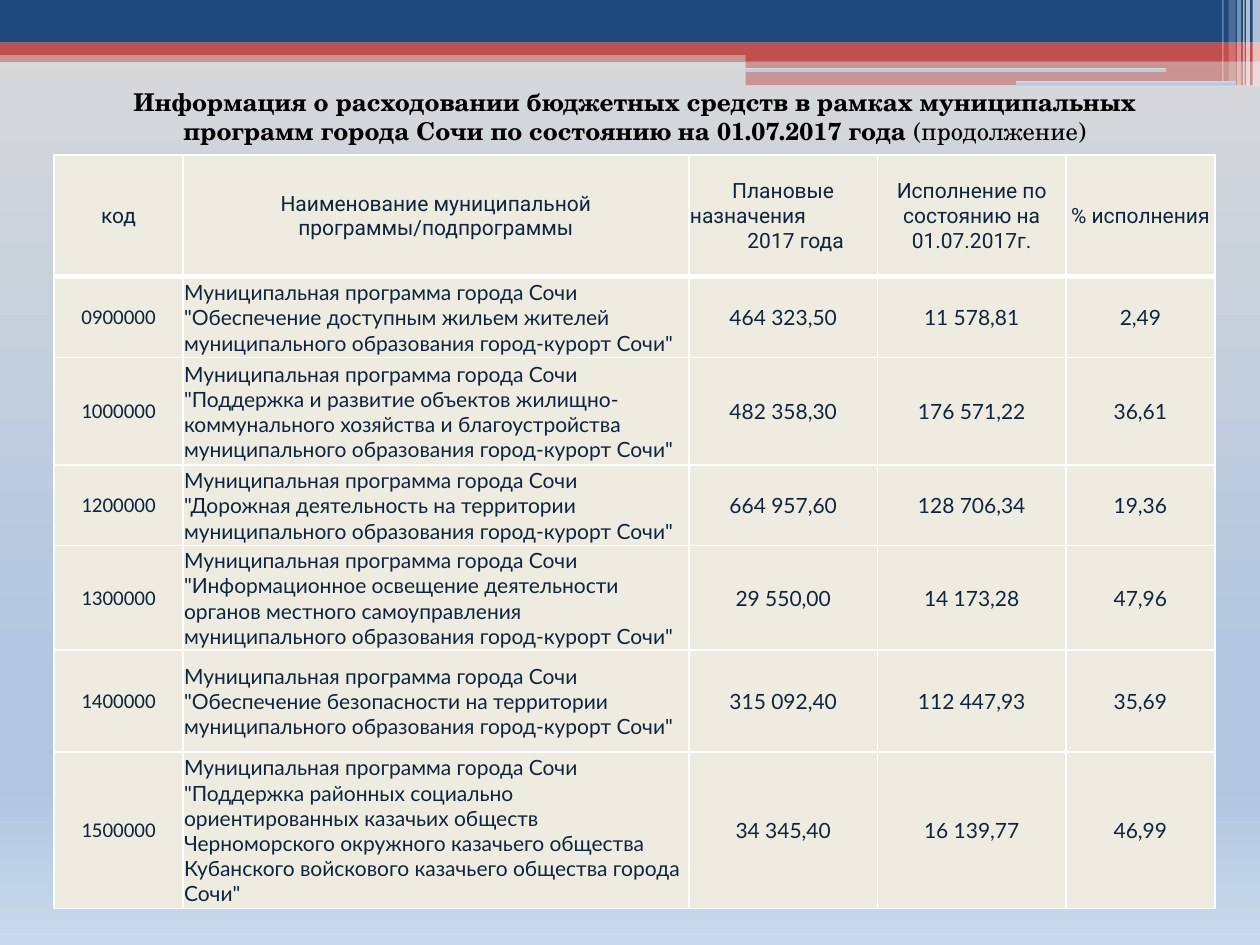
"""Build the slide on spending under the city programmes."""
from dataclasses import dataclass

from lxml import etree
from pptx import Presentation
from pptx.dml.color import RGBColor
from pptx.enum.shapes import MSO_SHAPE
from pptx.enum.text import MSO_ANCHOR, MSO_AUTO_SIZE, PP_ALIGN
from pptx.oxml.ns import qn
from pptx.util import Cm, Pt

RECT, ROUND = MSO_SHAPE.RECTANGLE, MSO_SHAPE.ROUNDED_RECTANGLE
LEFT, CENTER = PP_ALIGN.LEFT, PP_ALIGN.CENTER
MIDDLE, GROW = MSO_ANCHOR.MIDDLE, MSO_AUTO_SIZE.SHAPE_TO_FIT_TEXT

HEX = {"blue": "1F497D", "red": "C0504D", "white": "FFFFFF",
       "cell": "EEECE1", "ink": "0F243E", "black": "000000"}
STOPS = [(0, "D9D9D9"), (74, "B0C6E1"), (83, "B0C6E1"), (100, "CAD9EB")]


@dataclass
class Bar:
    """A band of the page header, in cm; no tint means the page gradient."""
    left: float
    top: float
    width: float
    height: float
    tint: str = ""
    alpha: int = 100


@dataclass
class Line:
    """A paragraph of a table cell; shift is its left margin in cm."""
    text: str
    font: str
    align: PP_ALIGN = CENTER
    shift: float = 0


@dataclass
class Program:
    """A table row on one programme."""
    code: str
    name: str
    plan: str
    spent: str
    share: str

    def cells(self) -> list[list[Line]]:
        """Give the lines of each cell."""
        name = f"Муниципальная программа города Сочи \"{self.name}\""
        sums = [[Line(text, "Lato")] for text in (self.plan, self.spent, self.share)]
        return [[Line(self.code, "Calibri")], [Line(name, "Lato", LEFT)], *sums]


BARS = [
    Bar(0, 1.02, 25.4, 0.23, "red", 50),
    Bar(0, 0, 25.4, 0.86, "blue"),
    Bar(0, 0.86, 25.4, 0.25, "red"),
    Bar(15.03, 0.99, 10.37, 0.24, "red"),
    Bar(15.03, 1.23, 10.37, 0.49, "red", 50),
    Bar(15.02, 1.37, 8.5, 0.08),
    Bar(20.48, 1.63, 4.44, 0.1),
    Bar(25.25, 0, 0.15, 1.73, "white", 65),
    Bar(25.12, 0, 0.08, 1.73, "white", 65),
    Bar(25.06, 0, 0.03, 1.73, "white", 60),
    Bar(24.94, 0, 0.08, 1.73, "white", 40),
    Bar(24.77, 0, 0.14, 1.63, "white", 20),
    Bar(24.64, 0, 0.03, 1.63, "white", 30),
]
HEADS = [
    [Line("код", "Roboto")],
    [Line("Наименование муниципальной программы/подпрограммы", "Roboto")],
    [Line("Плановые", "Roboto"), Line("назначения", "Roboto", LEFT),
     Line("2017 года", "Roboto", CENTER, 0.5)],
    [Line("Исполнение по состоянию на 01.07.2017г.", "Roboto")],
    [Line("% исполнения", "Roboto")],
]
PROGRAMS = [
    Program("0900000", "Обеспечение доступным жильем жителей муниципального "
            "образования город-курорт Сочи", "464 323,50", "11 578,81", "2,49"),
    Program("1000000", "Поддержка и развитие объектов жилищно-коммунального "
            "хозяйства и благоустройства муниципального образования "
            "город-курорт Сочи", "482 358,30", "176 571,22", "36,61"),
    Program("1200000", "Дорожная деятельность на территории муниципального "
            "образования город-курорт Сочи", "664 957,60", "128 706,34", "19,36"),
    Program("1300000", "Информационное освещение деятельности органов местного "
            "самоуправления муниципального образования город-курорт Сочи",
            "29 550,00", "14 173,28", "47,96"),
    Program("1400000", "Обеспечение безопасности на территории муниципального "
            "образования город-курорт Сочи", "315 092,40", "112 447,93", "35,69"),
    Program("1500000", "Поддержка районных социально ориентированных казачьих "
            "обществ Черноморского окружного казачьего общества Кубанского "
            "войскового казачьего общества города Сочи",
            "34 345,40", "16 139,77", "46,99"),
]
COLS = [2.6, 10.2, 3.8, 3.8, 3]
ROWS = [2.46, 1.63, 2.16, 1.63, 2.1, 2.06, 3.15]


def color(name: str) -> RGBColor:
    """Look up a colour."""
    return RGBColor.from_string(HEX[name])


def paint_page(fill, root) -> None:
    """Give a fill the vertical page gradient."""
    fill.gradient()
    grad = root.xpath(".//a:gradFill")[0]
    for child in list(grad):
        grad.remove(child)
    stops = etree.SubElement(grad, qn("a:gsLst"))
    for place, tone in STOPS:
        stop = etree.SubElement(stops, qn("a:gs"), pos=str(place * 1000))
        etree.SubElement(stop, qn("a:srgbClr"), val=tone)
    etree.SubElement(grad, qn("a:lin"), ang="5400000", scaled="0")


def draw_bar(slide, bar: Bar) -> None:
    """Draw one header band."""
    kind = RECT if bar.tint else ROUND
    shape = slide.shapes.add_shape(kind, Cm(bar.left), Cm(bar.top),
                                   Cm(bar.width), Cm(bar.height))
    shape.shadow.inherit = False
    shape.line.fill.background()
    if not bar.tint:
        paint_page(shape.fill, shape.element)
        return
    shape.fill.solid()
    shape.fill.fore_color.rgb = color(bar.tint)
    if bar.alpha < 100:
        tone = shape.element.xpath("./p:spPr/a:solidFill/a:srgbClr")[0]
        etree.SubElement(tone, qn("a:alpha"), val=str(bar.alpha * 1000))


def edge_cell(cell, top: int, base: int) -> None:
    """Draw white cell borders, with widths in points."""
    props = cell._tc.get_or_add_tcPr()
    sides = {"a:lnL": 1, "a:lnR": 1, "a:lnT": top, "a:lnB": base}
    for spot, (side, width) in enumerate(sides.items()):
        line = etree.Element(qn(side), w=str(Pt(width)))
        fill = etree.SubElement(line, qn("a:solidFill"))
        etree.SubElement(fill, qn("a:srgbClr"), val=HEX["white"])
        props.insert(spot, line)


def fill_cell(cell, lines: list[Line]) -> None:
    """Write and style a table cell."""
    cell.fill.solid()
    cell.fill.fore_color.rgb = color("cell")
    cell.vertical_anchor = MIDDLE
    cell.margin_left = cell.margin_right = cell.margin_top = Cm(0.02)
    cell.margin_bottom = 0
    frame = cell.text_frame
    frame.text = "\n".join(line.text for line in lines)
    for para, line in zip(frame.paragraphs, lines):
        para.alignment = line.align
        para.font.name, para.font.size = line.font, Pt(12)
        para.font.color.rgb = color("ink")
        if line.shift:
            para._p.get_or_add_pPr().set("marL", str(Cm(line.shift)))


def draw_table(slide) -> None:
    """Draw the table of programmes."""
    frame = slide.shapes.add_table(len(ROWS), len(COLS), Cm(1.09), Cm(3.12),
                                   Cm(sum(COLS)), Cm(sum(ROWS)))
    table = frame.table
    table.first_row = table.horz_banding = False
    for col, width in zip(table.columns, COLS):
        col.width = Cm(width)
    data = [HEADS] + [item.cells() for item in PROGRAMS]
    for index, (row, height, cells) in enumerate(zip(table.rows, ROWS, data)):
        row.height = Cm(height)
        for cell, lines in zip(row.cells, cells):
            fill_cell(cell, lines)
            edge_cell(cell, 3 if index == 1 else 1, 3 if index == 0 else 1)


def draw_title(slide) -> None:
    """Write the slide title."""
    box = slide.shapes.add_textbox(Cm(1.5), Cm(1.63), Cm(22.6), Cm(1.45))
    frame = box.text_frame
    frame.word_wrap, frame.auto_size = True, GROW
    para = frame.paragraphs[0]
    para.alignment = CENTER
    para.font.name, para.font.size = "TeX Gyre Schola", Pt(14)
    para.font.color.rgb = color("black")
    main = para.add_run()
    main.text = ("Информация о расходовании бюджетных средств в рамках муниципальных "
                 "программ города Сочи по состоянию на 01.07.2017 года ")
    main.font.bold = True
    para.add_run().text = "(продолжение)"


def main() -> None:
    """Build and save the deck."""
    deck = Presentation()
    deck.slide_width, deck.slide_height = Cm(25.4), Cm(19.05)
    slide = deck.slides.add_slide(deck.slide_layouts[6])
    paint_page(slide.background.fill, slide.element)
    for bar in BARS:
        draw_bar(slide, bar)
    draw_table(slide)
    draw_title(slide)
    deck.save("out.pptx")


if __name__ == "__main__":
    main()
